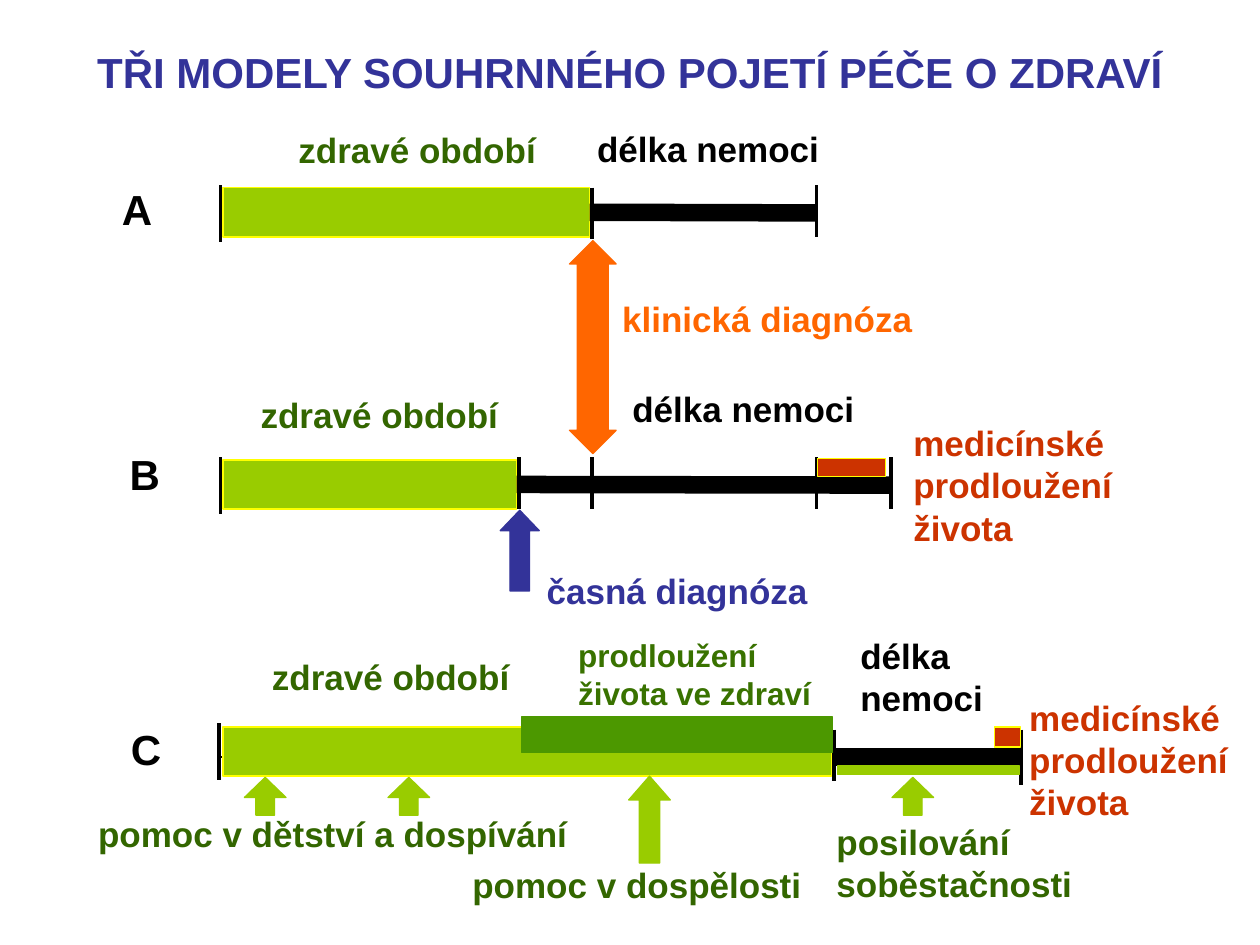
from pptx import Presentation
from pptx import util as u
from pptx.dml.color import RGBColor
from pptx.enum import shapes, text
from pptx.oxml.ns import qn
from lxml import etree

WIDE, HIGH = 10, 7.5
START, BAR, LEFT = 1.75, 0.39, 1.77
BLACK, GREEN, LIME, DARK = "000000", "336600", "99CC00", "4C9800"
BLUE, ORANGE, RED, YELLOW = "333399", "FF6600", "CC3300", "FFFF00"
HEALTHY, ILL = "zdravé období", "délka nemoci"
LONGER = "medicínské prodloužení života"
KIND = shapes.MSO_SHAPE

# name, name place, axis, bar top, bar width, end, ticks as (x, top, length)
ROWS = [
    ("A", (0.87, 1.41), 1.69, 1.49, 2.91, 6.48,
     [(START, 1.47, 0.45), (4.7, 1.49, 0.41), (6.48, 1.47, 0.41)]),
    ("B", (0.93, 3.51), 3.85, 3.65, 2.33, 7.07,
     [(START, 3.63, 0.45)] + [(x, 3.63, 0.41) for x in (4.12, 4.7, 6.48, 7.07)]),
    ("C", (0.94, 5.69), 6.01, 5.77, 4.83, 8.1,
     [(1.74, 5.74, 0.45), (6.62, 5.79, 0.41), (8.1, 5.79, 0.44)]),
]
PANELS = [
    (HEALTHY, 2.27, 0.97), (HEALTHY, 1.97, 3.07), (HEALTHY, 2.06, 5.15),
    ("posilování soběstačnosti", 6.54, 6.46),
]
LABELS = [
    (ILL, (4.64, 0.96, 2.5, 0.65), 20, BLACK),
    (ILL, (4.92, 3.03, 2.5, 0.45), 20, BLACK),
    (ILL, (6.73, 4.99, 1.4, 0.65), 20, BLACK),
    ("klinická diagnóza", (4.84, 2.31, 3.16, 0.43), 20, ORANGE),
    ("časná diagnóza", (4.24, 4.47, 2.73, 0.43), 20, BLUE),
    (LONGER, (7.15, 3.3, 1.89, 1.1), 20, RED),
    (LONGER, (8.07, 5.48, 1.89, 1.1), 20, RED),
    ("prodloužení života ve zdraví", (4.49, 5, 2.12, 0.7), 18, "397200"),
    ("pomoc v dětství a dospívání", (0.68, 6.4, 3.94, 0.61), 20, GREEN),
    ("pomoc v dospělosti", (3.65, 6.8, 2.85, 0.48), 20, GREEN),
]
BLOCKS = [
    ((6.49, 3.64, 0.54, 0.14), RED, YELLOW),
    ((6.65, 6.08, 1.44, 0.07), LIME, LIME),
    ((4.14, 5.69, 2.47, 0.28), DARK, DARK),
    ((7.89, 5.77, 0.21, 0.16), RED, YELLOW),
]
ARROWS = [
    (KIND.UP_DOWN_ARROW, (4.52, 1.91, 0.37, 1.69), ORANGE, (0.455, 0.661)),
    (KIND.UP_ARROW, (3.97, 4.05, 0.31, 0.64), BLUE, (0.5, 0.523)),
    (KIND.UP_ARROW, (4.99, 6.16, 0.33, 0.69), LIME, (0.49, 0.573)),
] + [(KIND.UP_ARROW, (x, 6.17, 0.33, 0.3), LIME, (0.448, 0.532))
     for x in (1.94, 3.08, 7.08)]


def rgb(code):
    """Turn a hex string into a colour."""
    return RGBColor.from_string(code)


def write(shape, words, size, color, align="LEFT"):
    """Set bold text at the top of a shape."""
    frame = shape.text_frame
    frame.word_wrap = True
    frame.vertical_anchor = text.MSO_ANCHOR.TOP
    para = frame.paragraphs[0]
    para.text = words
    para.alignment = getattr(text.PP_ALIGN, align)
    form = {"name": "Arial", "size": u.Pt(size), "bold": True}
    for key, value in form.items():
        setattr(para.runs[0].font, key, value)
    para.runs[0].font.color.rgb = rgb(color)


def label(slide, words, box, size, color, align="LEFT"):
    """Add a text box."""
    shape = slide.shapes.add_textbox(*map(u.Inches, box))
    write(shape, words, size, color, align)


def block(slide, kind, box, fill, edge=None, adjust=()):
    """Add a filled preset shape."""
    shape = slide.shapes.add_shape(kind, *map(u.Inches, box))
    shape.shadow.inherit = False
    shape.fill.solid()
    shape.fill.fore_color.rgb = rgb(fill)
    if edge:
        shape.line.color.rgb = rgb(edge)
        shape.line.width = u.Pt(0.75)
    else:
        shape.line.fill.background()
    for spot, value in enumerate(adjust):
        shape.adjustments[spot] = value
    return shape


def line(slide, ends, width):
    """Add a straight black line."""
    join = slide.shapes.add_connector(
        shapes.MSO_CONNECTOR.STRAIGHT, *map(u.Inches, ends))
    join.line.color.rgb = rgb(BLACK)
    join.line.width = u.Pt(width)
    etree.SubElement(join._element.spPr, qn("a:effectLst"))
    return join


def main():
    """Build the slide of three care models."""
    deck = Presentation()
    deck.slide_width, deck.slide_height = u.Inches(WIDE), u.Inches(HIGH)
    slide = deck.slides.add_slide(deck.slide_layouts[6])
    label(slide, "TŘI MODELY SOUHRNNÉHO POJETÍ PÉČE O ZDRAVÍ",
          (0, 0.32, WIDE, 0.5), 24, BLUE, "CENTER")
    for words, x, y in PANELS:
        panel = block(slide, KIND.RECTANGLE, (x, y, 2.1, 0.61), "FFFFFF")
        write(panel, words, 20, GREEN)
    for name, spot, axis, top, span, end, ticks in ROWS:
        label(slide, name, (*spot, 0.44, 0.65), 24, BLACK)
        line(slide, (START, axis, end, axis), 1)
        for x, y, size in ticks:
            line(slide, (x, y, x, y + size), 2.25)
        bar = block(slide, KIND.RECTANGLE, (LEFT, top, span, BAR), LIME, YELLOW)
        ill = line(slide, (LEFT + span + 0.02, axis, end, axis), 10)
        if abs(top + BAR / 2 - axis) < 0.01:
            ill.begin_connect(bar, 3)
    for box, fill, edge in BLOCKS:
        block(slide, KIND.RECTANGLE, box, fill, edge)
    for kind, box, color, adjust in ARROWS:
        block(slide, kind, box, color, color, adjust)
    for item in LABELS:
        label(slide, *item)
    deck.save("out.pptx")


if __name__ == "__main__":
    main()
